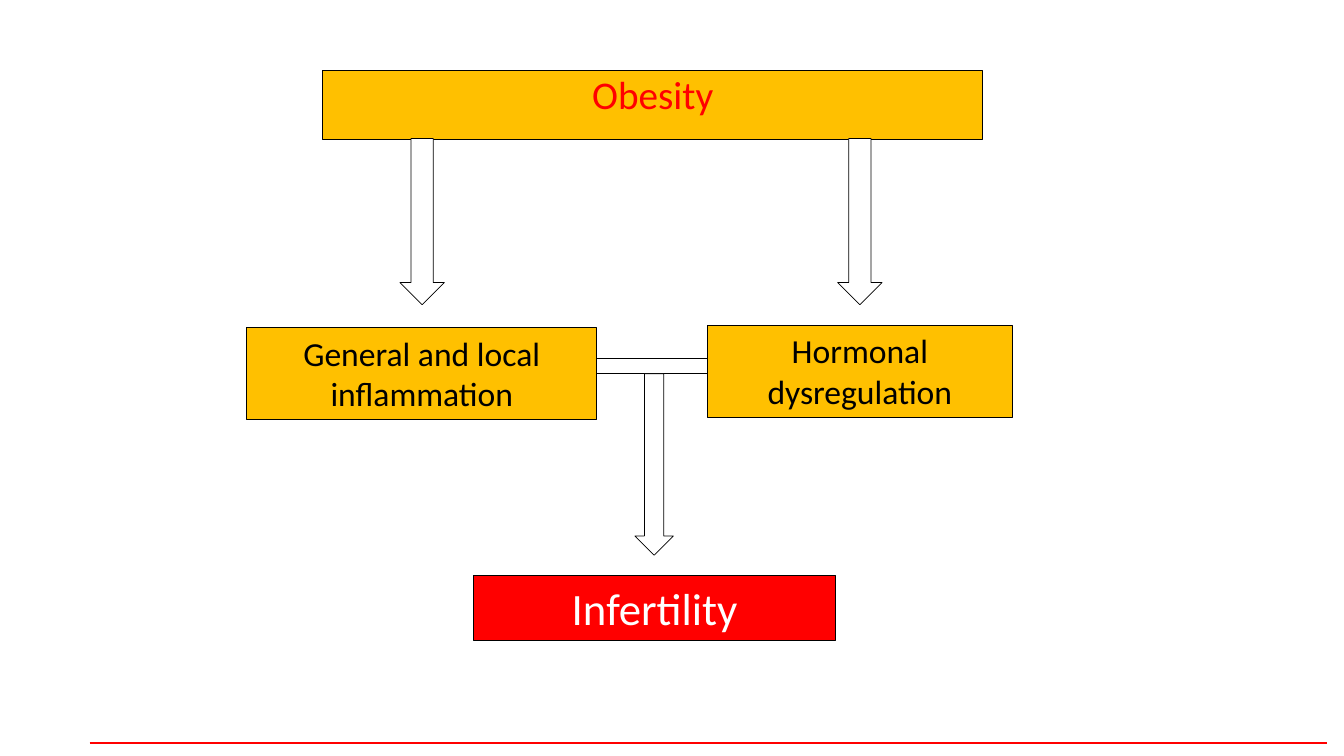
import pptx
import pptx.util
import pptx.dml.color
import pptx.enum.shapes
import pptx.enum.text
import pptx.oxml.ns
import lxml.etree

Cm = pptx.util.Cm
Pt = pptx.util.Pt
SHAPES = pptx.enum.shapes.MSO_SHAPE
COLORS = {"amber": "FFC000", "red": "FF0000", "black": "000000", "white": "FFFFFF"}


class Flowchart:
    font = "Calibri"

    def __init__(self, slide):
        self.slide = slide

    def color(self, name):
        return pptx.dml.color.RGBColor.from_string(COLORS[name])

    def shape(self, kind, left, top, width, height, fill, line_width):
        shape = self.slide.shapes.add_shape(kind, Cm(left), Cm(top), Cm(width), Cm(height))
        shape.shadow.inherit = False
        shape.fill.solid()
        shape.fill.fore_color.rgb = self.color(fill)
        shape.line.color.rgb = self.color("black")
        shape.line.width = Pt(line_width)
        return shape

    def box(self, text, left, top, width, height, size, fill="amber", ink="black", spacing=1.0):
        shape = self.shape(SHAPES.RECTANGLE, left, top, width, height, fill, 0.75)
        frame = shape.text_frame
        frame.word_wrap = True
        frame.vertical_anchor = pptx.enum.text.MSO_ANCHOR.TOP
        frame.text = text
        paragraph = frame.paragraphs[0]
        paragraph.alignment = pptx.enum.text.PP_ALIGN.CENTER
        paragraph.line_spacing = spacing
        font = paragraph.runs[0].font
        font.name = self.font
        font.size = Pt(size)
        font.color.rgb = self.color(ink)

    def down_arrow(self, left, top, width, height):
        self.shape(SHAPES.DOWN_ARROW, left, top, width, height, "white", 0.5)

    def bridge(self, left, top, width, height):
        self.shape(SHAPES.FLOWCHART_PROCESS, left, top, width, height, "white", 0.5)

    def rule(self, left, right, y):
        line = self.slide.shapes.add_connector(
            pptx.enum.shapes.MSO_CONNECTOR.STRAIGHT, Cm(left), Cm(y), Cm(right), Cm(y))
        line.line.color.rgb = self.color("red")
        line.line.width = Pt(1)
        lxml.etree.SubElement(line._element.spPr, pptx.oxml.ns.qn("a:effectLst"))


def main():
    presentation = pptx.Presentation()
    presentation.slide_width = Cm(33.87)
    presentation.slide_height = Cm(19.05)
    chart = Flowchart(presentation.slides.add_slide(presentation.slide_layouts[6]))

    chart.rule(2.26, 33.45, 18.72)
    chart.box("Obesity", 8.13, 1.78, 16.64, 1.73, 28, ink="red", spacing=0.9)
    for cause_left in (21.11, 10.08):
        chart.down_arrow(cause_left, 3.49, 1.12, 4.19)
    chart.box("General and local inflammation", 6.22, 8.26, 8.82, 2.32, 24)
    chart.box("Hormonal dysregulation", 17.83, 8.2, 7.68, 2.32, 24)
    chart.box("Infertility", 11.94, 14.5, 9.12, 1.63, 32, fill="red", ink="white")
    chart.bridge(15.04, 9.04, 2.79, 0.38)
    chart.down_arrow(16, 9.42, 0.97, 4.57)

    presentation.save("out.pptx")


if __name__ == "__main__":
    main()
